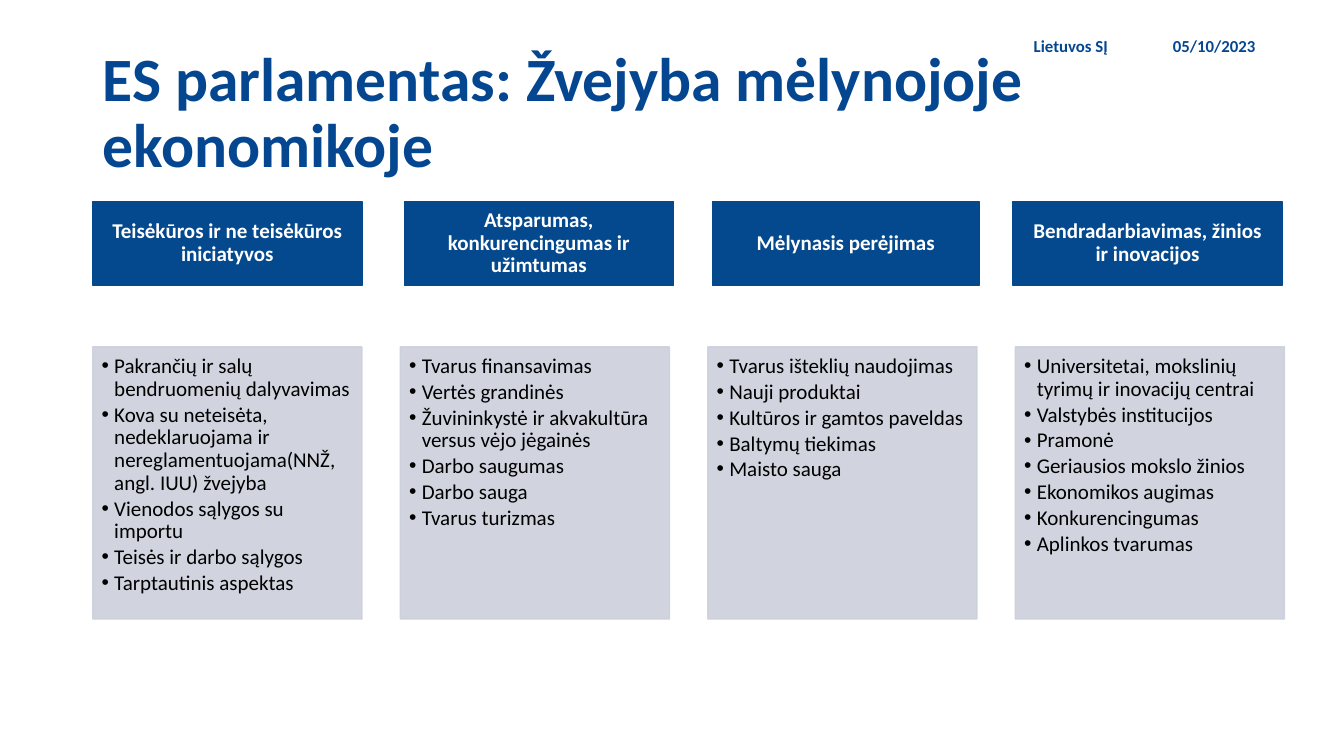
from lxml.etree import SubElement
from pptx import Presentation
from pptx.dml.color import RGBColor
from pptx.enum.shapes import MSO_SHAPE as Shape
from pptx.enum.text import MSO_ANCHOR as Anchor, PP_ALIGN as Align
from pptx.oxml.ns import qn
from pptx.util import Cm, Pt

TITLE = "ES parlamentas: Žvejyba mėlynojoje ekonomikoje"
DATE = "05/10/2023"
PLACE = "Lietuvos SĮ"
COLUMNS = [
    ("Teisėkūros ir ne teisėkūros iniciatyvos", 2.34, 6.78, [
        "Pakrančių ir salų bendruomenių dalyvavimas",
        "Kova su neteisėta, nedeklaruojama ir nereglamentuojama(NNŽ, angl. IUU) žvejyba",
        "Vienodos sąlygos su importu",
        "Teisės ir darbo sąlygos",
        "Tarptautinis aspektas",
    ]),
    ("Atsparumas, konkurencingumas ir užimtumas", 10.19, 6.78, [
        "Tvarus finansavimas",
        "Vertės grandinės",
        "Žuvininkystė ir akvakultūra versus vėjo jėgainės",
        "Darbo saugumas",
        "Darbo sauga",
        "Tvarus turizmas",
    ]),
    ("Mėlynasis perėjimas", 17.96, 6.71, [
        "Tvarus išteklių naudojimas",
        "Nauji produktai",
        "Kultūros ir gamtos paveldas",
        "Baltymų tiekimas",
        "Maisto sauga",
    ]),
    ("Bendradarbiavimas, žinios ir inovacijos", 25.53, 6.78, [
        "Universitetai, mokslinių tyrimų ir inovacijų centrai",
        "Valstybės institucijos",
        "Pramonė",
        "Geriausios mokslo žinios",
        "Ekonomikos augimas",
        "Konkurencingumas",
        "Aplinkos tvarumas",
    ]),
]

NAVY = RGBColor(0x04, 0x49, 0x8E)
BLUE = RGBColor(0x05, 0x46, 0x90)
GREY = RGBColor(0xCC, 0xD0, 0xDB)
WHITE = RGBColor(255, 255, 255)
BLACK = RGBColor(0, 0, 0)

LEFT, STEP, WIDTH = 2.34, 7.75, 6.78
HEAD_TOP, HEAD_HIGH = 5.08, 2.11
LIST_TOP, LIST_HIGH = 8.74, 6.86
NOTE_TOP, NOTE_HIGH = 0.86, 0.61


def write(shape, text, size=15, color=BLUE, bold=True, align=Align.LEFT,
          anchor=Anchor.MIDDLE, pads=(0.25, 0.13, 0.25, 0.13),
          line=None, after=0, bullet=False):
    frame = shape.text_frame
    frame.word_wrap = True
    frame.vertical_anchor = anchor
    (frame.margin_left, frame.margin_top,
     frame.margin_right, frame.margin_bottom) = map(Cm, pads)
    frame.text = text
    for para in frame.paragraphs:
        para.alignment = align
        para.line_spacing = line
        para.space_after = Pt(after)
        if bullet:
            para.level = 1
            props = para._p.get_or_add_pPr()
            props.set("marL", str(Cm(0.32)))
            props.set("indent", str(-Cm(0.32)))
            SubElement(props, qn("a:buFont")).set("typeface", "Arial")
            SubElement(props, qn("a:buChar")).set("char", "•")
        for run in para.runs:
            font = run.font
            font.name, font.size, font.bold = "Calibri", Pt(size), bold
            font.color.rgb = color


def add_box(slide, left, top, width, high, color, alpha=None):
    box = slide.shapes.add_shape(
        Shape.RECTANGLE, Cm(left), Cm(top), Cm(width), Cm(high))
    box.shadow.inherit = False
    box.fill.solid()
    box.fill.fore_color.rgb = color
    box.line.color.rgb = color
    box.line.width = Pt(1)
    if alpha:
        for tint in box._element.spPr.iter(qn("a:srgbClr")):
            SubElement(tint, qn("a:alpha")).set("val", str(alpha * 1000))
    return box


def add_label(slide, left, top, width, high, text, **style):
    label = slide.shapes.add_textbox(Cm(left), Cm(top), Cm(width), Cm(high))
    write(label, text, **style)


def main():
    deck = Presentation()
    deck.slide_width, deck.slide_height = Cm(33.87), Cm(19.05)
    slide = deck.slides.add_slide(deck.slide_layouts[6])

    for index, (head, left, width, items) in enumerate(COLUMNS):
        box = add_box(slide, left, HEAD_TOP, width, HEAD_HIGH, NAVY)
        write(box, head, color=WHITE, align=Align.CENTER, line=0.9,
              pads=(0.3, 0.17, 0.3, 0.17))
        box = add_box(slide, LEFT + index * STEP, LIST_TOP, WIDTH, LIST_HIGH,
                      GREY, alpha=90)
        write(box, "\n".join(items), color=BLACK, bold=False, line=0.9,
              anchor=Anchor.TOP, after=2.2, bullet=True,
              pads=(0.22, 0.22, 0.3, 0.33))

    add_label(slide, LEFT, 0.86, 28.7, 4.06, TITLE, size=44, line=0.9)
    add_label(slide, 29.31, NOTE_TOP, 3.35, NOTE_HIGH, DATE, size=12)
    add_label(slide, 20.7, NOTE_TOP, 7.47, NOTE_HIGH, PLACE, size=12,
              align=Align.RIGHT)
    deck.save("out.pptx")


if __name__ == "__main__":
    main()
